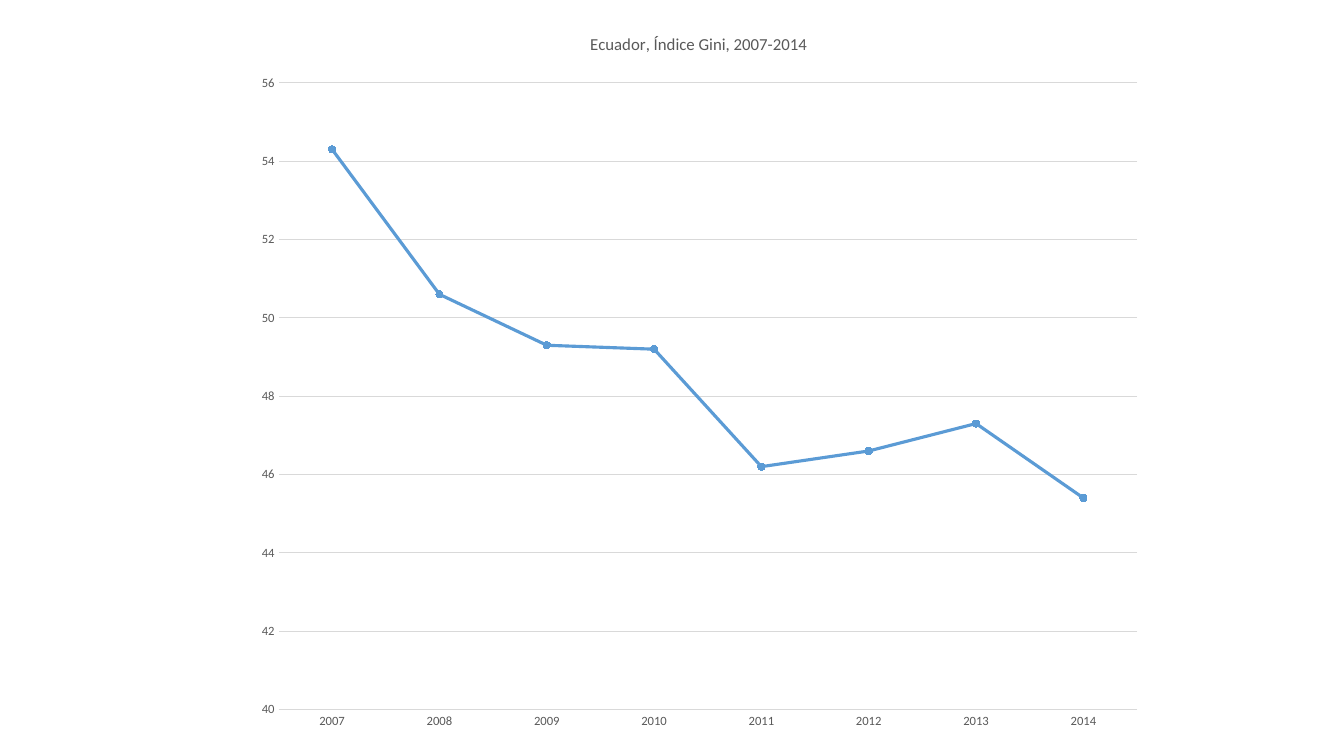
from lxml import etree
from pptx import Presentation
from pptx.chart.data import CategoryChartData
from pptx.dml.color import RGBColor
from pptx.enum import chart as ch
from pptx.oxml import ns
from pptx.util import Inches, Pt

COLORS = {"text": "595959", "grid": "D9D9D9", "line": "5B9BD5"}
GINI = {
    "2007": 54.3, "2008": 50.6, "2009": 49.3, "2010": 49.2,
    "2011": 46.2, "2012": 46.6, "2013": 47.3, "2014": 45.4,
}
PLOT_AREA = {"x": 0.04, "y": 0.1, "w": 0.94, "h": 0.86}


def rgb(name):
    return RGBColor.from_string(COLORS[name])


def set_attrs(obj, values):
    for name, value in values.items():
        setattr(obj, name, value)


def style_font(font, size):
    set_attrs(font, {"name": "Calibri", "size": Pt(size), "bold": False})
    font.color.rgb = rgb("text")


def style_line(line, color, width):
    line.color.rgb = rgb(color)
    line.width = Pt(width)


def add_title(chart, title):
    chart.has_title = True
    chart.chart_title.include_in_layout = False
    p = chart.chart_title.text_frame.paragraphs[0]
    r = p.add_run()
    r.text = title
    style_font(r.font, 12)


def style_axes(chart):
    years, values = chart.category_axis, chart.value_axis
    for axis in (years, values):
        set_attrs(axis, {
            "major_tick_mark": ch.XL_TICK_MARK.NONE,
            "minor_tick_mark": ch.XL_TICK_MARK.NONE,
        })
        style_font(axis.tick_labels.font, 9)
    style_line(years.format.line, "grid", 0.75)
    set_attrs(values, {
        "minimum_scale": 40, "maximum_scale": 56, "major_unit": 2,
        "has_major_gridlines": True,
    })
    set_attrs(values.tick_labels, {
        "number_format": "0", "number_format_is_linked": False,
    })
    values.format.line.fill.background()
    style_line(values.major_gridlines.format.line, "grid", 0.75)


def style_series(series):
    series.smooth = False
    style_line(series.format.line, "line", 2.25)
    marker = series.marker
    set_attrs(marker, {"style": ch.XL_MARKER_STYLE.CIRCLE, "size": 5})
    marker.format.fill.solid()
    marker.format.fill.fore_color.rgb = rgb("line")
    style_line(marker.format.line, "line", 0.75)


def place_plot_area(chart, fractions):
    plot_area = chart.plots[0]._element.getparent()
    for old in plot_area.findall(ns.qn("c:layout")):
        plot_area.remove(old)
    layout = etree.Element(ns.qn("c:layout"))
    manual = etree.SubElement(layout, ns.qn("c:manualLayout"))
    settings = {"layoutTarget": "inner", "xMode": "edge", "yMode": "edge"}
    for tag, value in {**settings, **fractions}.items():
        etree.SubElement(manual, ns.qn(f"c:{tag}")).set("val", str(value))
    plot_area.insert(0, layout)


def add_line_chart(s, title, series_name, points, box):
    data = CategoryChartData()
    data.categories = list(points)
    data.add_series(series_name, points.values())
    chart = s.shapes.add_chart(
        ch.XL_CHART_TYPE.LINE_MARKERS, *map(Inches, box), data).chart
    chart.has_legend = False
    style_font(chart.font, 10)
    add_title(chart, title)
    style_axes(chart)
    chart.plots[0].vary_by_categories = False
    style_series(chart.plots[0].series[0])
    place_plot_area(chart, PLOT_AREA)


def main():
    prs = Presentation()
    set_attrs(prs, {"slide_width": Inches(13.33), "slide_height": Inches(7.5)})
    s = prs.slides.add_slide(prs.slide_layouts[6])
    add_line_chart(s, "Ecuador, Índice Gini, 2007-2014", "Series 1", GINI,
                   (2.4, 0.1, 9.06, 7.23))
    prs.save("out.pptx")


if __name__ == "__main__":
    main()
